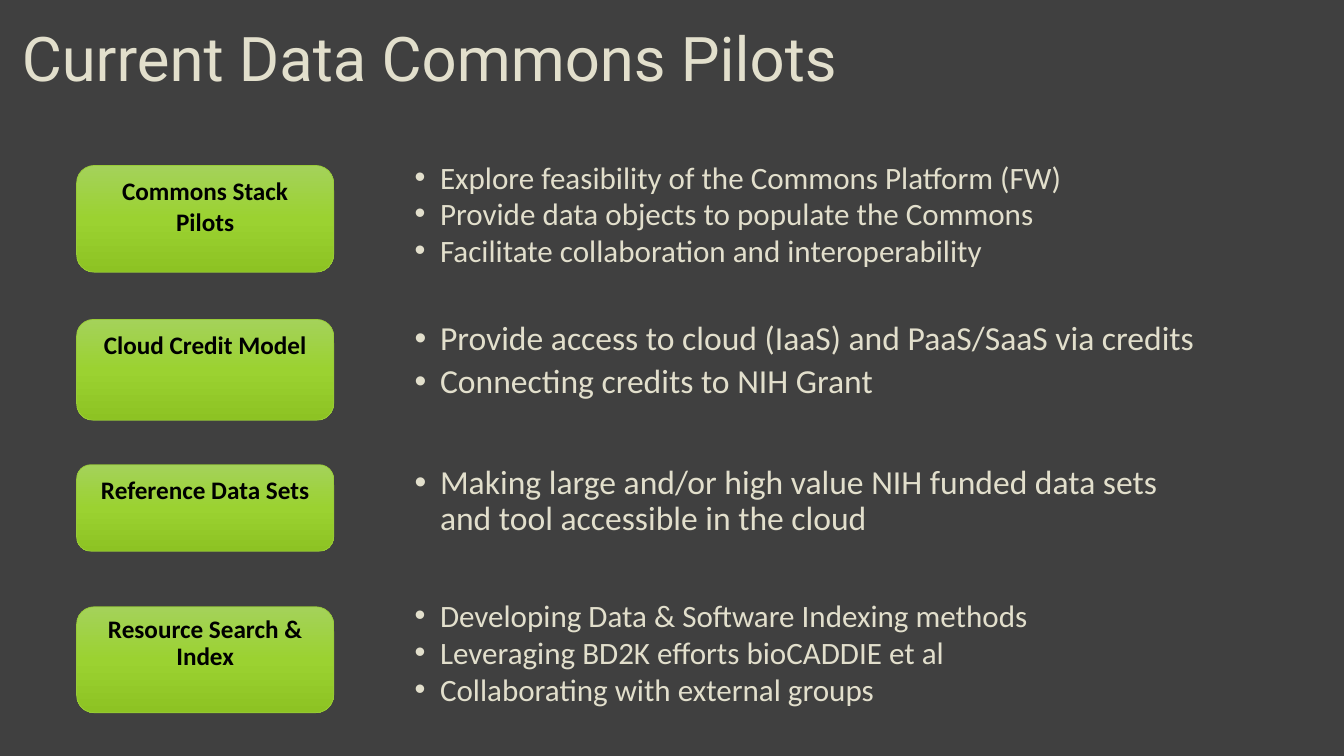
"""Build the slide on current data commons pilots."""
from copy import deepcopy

from pptx import Presentation
from pptx.dml.color import RGBColor
from pptx.enum.shapes import MSO_SHAPE as Shape
from pptx.enum.text import MSO_ANCHOR as Anchor, PP_ALIGN as Align
from pptx.oxml import parse_xml
from pptx.oxml.ns import nsdecls, qn
from pptx.util import Cm, Pt

COLORS = {
    "background": "404040",
    "text": "E2DFCC",
    "label": "000000",
    "border": "99CB38",
    "top": "A4D25A",
    "middle": "9BD231",
    "bottom": "8DC323",
}

LABEL_LEFT, LABEL_WIDTH = 1.93, 6.48
BULLETS_LEFT, BULLETS_HEIGHT = 8.94, 2.95
SMALL = {"size": 22.2, "line_spacing": 0.8}
LARGE = {"size": 24, "line_spacing": 0.9}

PILOTS = [
    {
        "label": "Commons Stack Pilots", "label_top": 4.17, "label_height": 2.69,
        "label_spacing": 1.0, "bullets_top": 4.04, "bullets_width": 28.19, "style": SMALL,
        "bullets": ["Explore feasibility of the Commons Platform (FW)",
                    "Provide data objects to populate the Commons",
                    "Facilitate collaboration and interoperability"],
    },
    {
        "label": "Cloud Credit Model", "label_top": 8.05, "label_height": 2.54,
        "label_spacing": 1.0, "bullets_top": 7.98, "bullets_width": 28.19, "style": LARGE,
        "bullets": ["Provide access to cloud (IaaS) and PaaS/SaaS via credits",
                    "Connecting credits to NIH Grant"],
    },
    {
        "label": "Reference Data Sets", "label_top": 11.71, "label_height": 2.18,
        "label_spacing": 1.0, "bullets_top": 11.61, "bullets_width": 21.54, "style": LARGE,
        "bullets": ["Making large and/or high value NIH funded data sets "
                    "and tool accessible in the cloud"],
    },
    {
        "label": "Resource Search & Index", "label_top": 15.29, "label_height": 2.67,
        "label_spacing": 0.9, "bullets_top": 15.09, "bullets_width": 21.54, "style": SMALL,
        "bullets": ["Developing Data & Software Indexing methods",
                    "Leveraging BD2K efforts bioCADDIE et al",
                    "Collaborating with external groups"],
    },
]


def color(name):
    """Return the named colour."""
    return RGBColor.from_string(COLORS[name])


def add_bullet(paragraph):
    """Give the paragraph a bullet with a hanging indent."""
    properties = paragraph._p.get_or_add_pPr()
    properties.set("marL", str(Cm(1.9)))
    properties.set("indent", str(-Cm(0.64)))
    properties.append(parse_xml(f'<a:buFont {nsdecls("a")} typeface="Arial"/>'))
    properties.append(parse_xml(f'<a:buChar {nsdecls("a")} char="•"/>'))


def write(shape, lines, size, font="Calibri", ink="text", bold=False,
          align=Align.LEFT, line_spacing=1.0, space_before=0, bullet=False):
    """Fill the shape with one formatted paragraph per line."""
    frame = shape.text_frame
    frame.word_wrap = True
    frame.vertical_anchor = Anchor.TOP
    frame.text = "\n".join(lines)
    for paragraph in frame.paragraphs:
        paragraph.alignment = align
        paragraph.line_spacing = line_spacing
        paragraph.space_before = Pt(space_before)
        paragraph.font.size = Pt(size)
        for run in paragraph.runs:
            run.font.name = font
            run.font.size = Pt(size)
            run.font.bold = bold
            run.font.color.rgb = color(ink)
        if bullet:
            add_bullet(paragraph)


def fill_gradient(shape):
    """Fill the shape with the three-stop vertical green gradient."""
    shape.fill.gradient()
    shape.fill.gradient_angle = 270
    first = next(shape._element.spPr.iter(qn("a:gs")))
    first.addnext(deepcopy(first))
    stops = zip(shape.fill.gradient_stops, ("top", "middle", "bottom"), (0, 0.5, 1))
    for stop, name, position in stops:
        stop.color.rgb = color(name)
        stop.position = position


def add_title(slide, left, top, width, height):
    """Add the slide title in the given box."""
    title = slide.shapes.add_textbox(Cm(left), Cm(top), Cm(width), Cm(height))
    write(title, ["Current Data Commons Pilots"], 44, font="Roboto", line_spacing=0.9)


def add_label(slide, text, line_spacing, left, top, width, height):
    """Add a green rounded label in the given box."""
    label = slide.shapes.add_shape(
        Shape.ROUNDED_RECTANGLE, Cm(left), Cm(top), Cm(width), Cm(height))
    label.shadow.inherit = False
    fill_gradient(label)
    label.line.color.rgb = color("border")
    label.line.width = Pt(0.5)
    write(label, [text], 18, ink="label", bold=True, align=Align.CENTER,
          line_spacing=line_spacing)


def add_bullets(slide, lines, style, left, top, width, height):
    """Add a bulleted list in the given box."""
    bullets = slide.shapes.add_textbox(Cm(left), Cm(top), Cm(width), Cm(height))
    write(bullets, lines, space_before=5, bullet=True, **style)


def main():
    """Build and save the presentation."""
    presentation = Presentation()
    presentation.slide_width, presentation.slide_height = Cm(33.87), Cm(19.05)
    slide = presentation.slides.add_slide(presentation.slide_layouts[6])
    slide.background.fill.solid()
    slide.background.fill.fore_color.rgb = color("background")
    add_title(slide, 0.3, 0.58, 33.02, 2.54)
    for pilot in PILOTS:
        add_label(slide, pilot["label"], pilot["label_spacing"], LABEL_LEFT,
                  pilot["label_top"], LABEL_WIDTH, pilot["label_height"])
        add_bullets(slide, pilot["bullets"], pilot["style"], BULLETS_LEFT,
                    pilot["bullets_top"], pilot["bullets_width"], BULLETS_HEIGHT)
    presentation.save("out.pptx")


if __name__ == "__main__":
    main()
